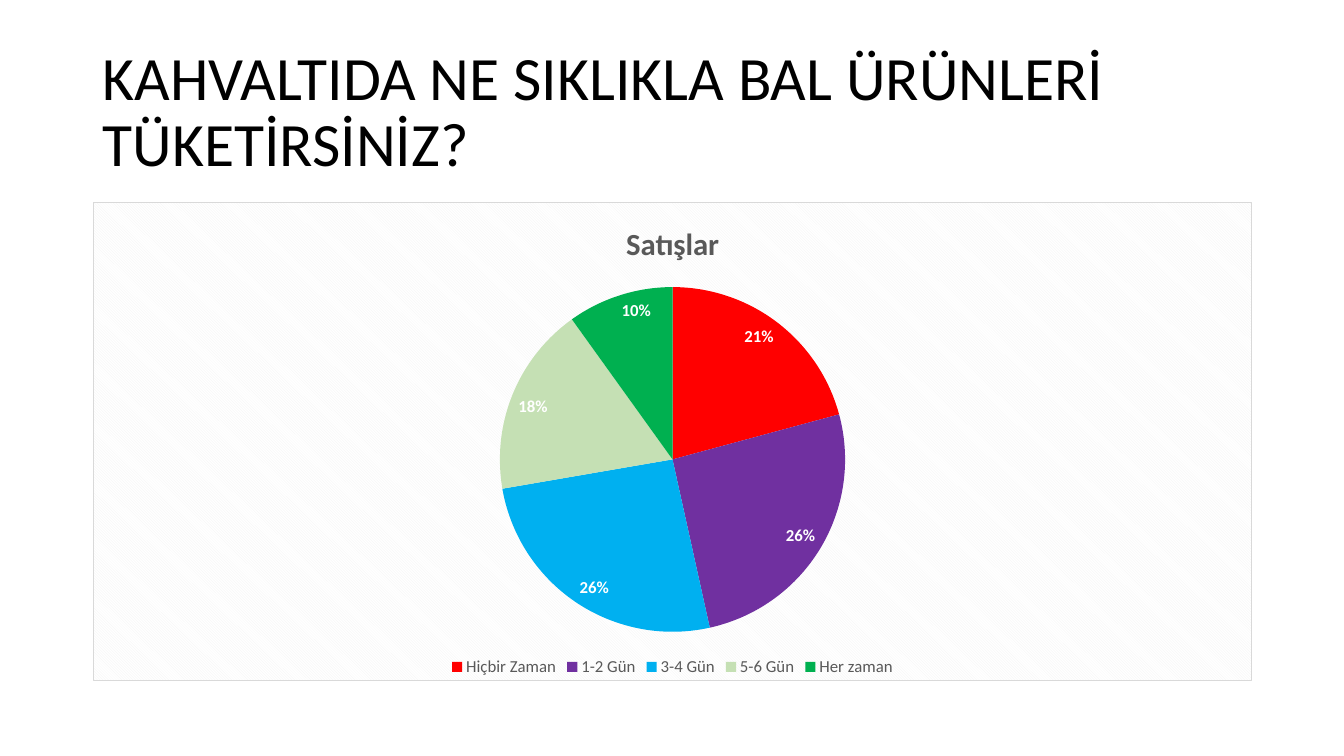
from dataclasses import dataclass

from lxml.etree import fromstring
from pptx import Presentation
from pptx.chart.data import CategoryChartData
from pptx.dml.color import RGBColor
from pptx.enum.chart import XL_CHART_TYPE, XL_LABEL_POSITION, XL_LEGEND_POSITION
from pptx.enum.text import MSO_ANCHOR
from pptx.util import Inches, Pt

HEAD = "KAHVALTIDA NE SIKLIKLA BAL ÜRÜNLERİ TÜKETİRSİNİZ?"
NAME = "Satışlar"
SLICES = [
    ("Hiçbir Zaman", 21, "FF0000"),
    ("1-2 Gün", 26, "7030A0"),
    ("3-4 Gün", 26, "00B0F0"),
    ("5-6 Gün", 18, "C5E0B4"),
    ("Her zaman", 10, "00B050"),
]


@dataclass(frozen=True)
class Theme:
    face: str = "Calibri"
    ink: str = "000000"
    gray: str = "595959"
    white: str = "FFFFFF"
    hatch: str = "F2F2F2"
    edge: str = "D9D9D9"
    head: int = 44
    title: int = 22
    label: int = 12
    base: int = 10


THEME = Theme()
WIDE, HIGH = Inches(13.33), Inches(7.5)
LEFT, SPAN = Inches(0.92), Inches(11.5)
HEAD_TOP, HEAD_HIGH = Inches(0.4), Inches(1.45)
PIE_TOP, PIE_HIGH = Inches(2), Inches(4.76)


def style(font, size, color, bold=False):
    font.name = THEME.face
    font.size = Pt(size)
    font.bold = bold
    font.color.rgb = RGBColor.from_string(color)


def add_head(slide):
    frame = slide.shapes.add_textbox(LEFT, HEAD_TOP, SPAN, HEAD_HIGH).text_frame
    frame.word_wrap = True
    frame.vertical_anchor = MSO_ANCHOR.MIDDLE
    para = frame.paragraphs[0]
    para.line_spacing = 0.9
    run = para.add_run()
    run.text = HEAD
    style(run.font, THEME.head, THEME.ink)


def add_back(chart):
    """Give the chart area its hatched fill and thin border."""
    space = chart.element
    back = fromstring(
        f'<c:spPr xmlns:c="{space.nsmap["c"]}" xmlns:a="{space.nsmap["a"]}">'
        f'<a:pattFill prst="dkDnDiag">'
        f'<a:fgClr><a:srgbClr val="{THEME.hatch}"/></a:fgClr>'
        f'<a:bgClr><a:srgbClr val="{THEME.white}"/></a:bgClr></a:pattFill>'
        f'<a:ln w="{Pt(0.75)}"><a:solidFill><a:srgbClr val="{THEME.edge}"/>'
        f'</a:solidFill></a:ln></c:spPr>'
    )
    space.find("c:chart", space.nsmap).addnext(back)


def add_pie(slide):
    names, counts, colors = zip(*SLICES)
    data = CategoryChartData()
    data.categories = names
    data.add_series(NAME, counts)
    chart = slide.shapes.add_chart(
        XL_CHART_TYPE.PIE, LEFT, PIE_TOP, SPAN, PIE_HIGH, data
    ).chart
    style(chart.font, THEME.base, THEME.ink)
    add_back(chart)

    chart.has_title = True
    run = chart.chart_title.text_frame.paragraphs[0].add_run()
    run.text = NAME
    style(run.font, THEME.title, THEME.gray, bold=True)
    chart.chart_title.include_in_layout = False

    chart.has_legend = True
    chart.legend.position = XL_LEGEND_POSITION.BOTTOM
    chart.legend.include_in_layout = False
    style(chart.legend.font, THEME.label, THEME.gray)

    plot = chart.plots[0]
    plot.vary_by_categories = True
    for spot, color in enumerate(colors):
        fill = plot.series[0].points[spot].format.fill
        fill.solid()
        fill.fore_color.rgb = RGBColor.from_string(color)

    labels = plot.series[0].data_labels
    labels.show_percentage = True
    labels.show_value = False
    labels.number_format = "0%"
    labels.number_format_is_linked = False
    labels.position = XL_LABEL_POSITION.INSIDE_END
    style(labels.font, THEME.label, THEME.white, bold=True)


def main():
    deck = Presentation()
    deck.slide_width, deck.slide_height = WIDE, HIGH
    slide = deck.slides.add_slide(deck.slide_layouts[6])
    add_head(slide)
    add_pie(slide)
    deck.save("out.pptx")


if __name__ == "__main__":
    main()
